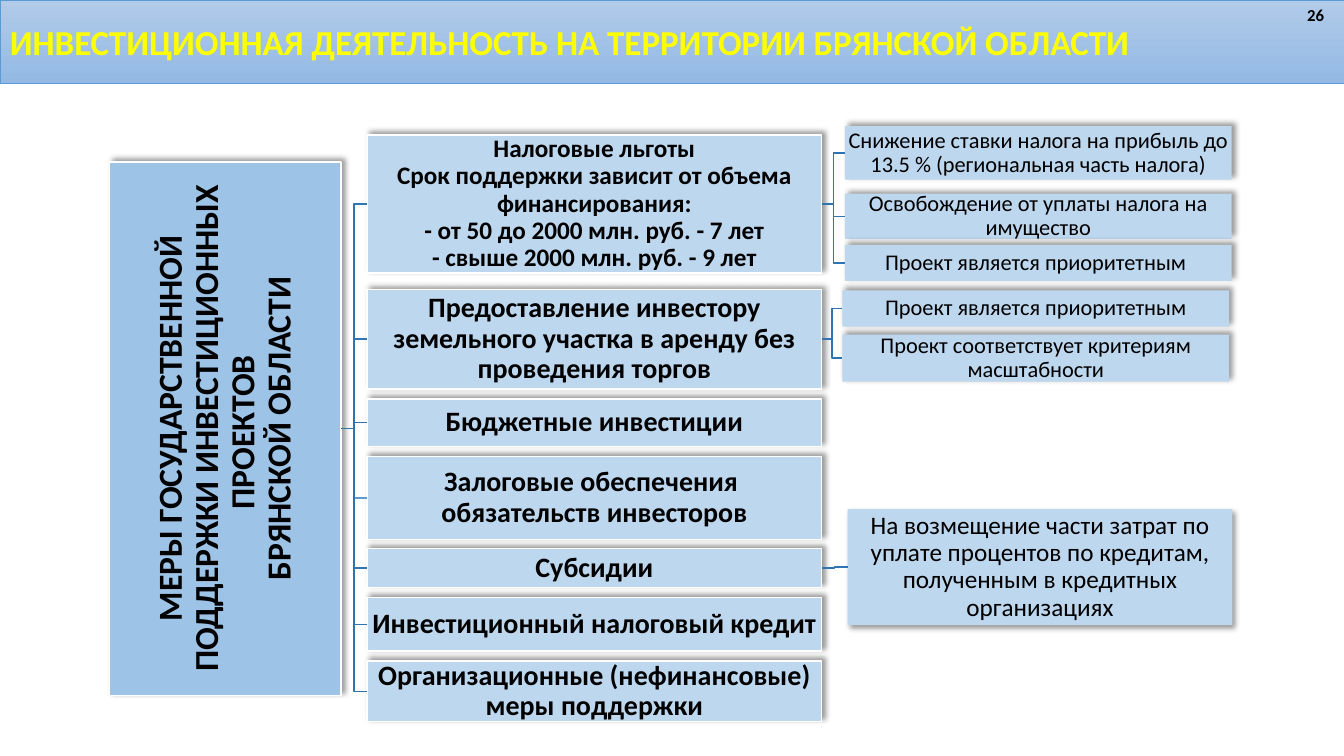
"""Draw the slide on state support measures for investment projects."""
from dataclasses import dataclass

from lxml.etree import SubElement
from pptx import Presentation
from pptx.dml.color import RGBColor
from pptx.enum.shapes import MSO_CONNECTOR, MSO_SHAPE
from pptx.enum.text import MSO_ANCHOR, PP_ALIGN
from pptx.oxml.ns import qn
from pptx.shapes.autoshape import Shape
from pptx.slide import Slide
from pptx.text.text import TextFrame
from pptx.util import Cm, Pt

FONT = "Calibri"
PALE, BLUE, SKY = "BDD7EE", "2E75B6", "5B9BD5"
MID_LEFT, MID_WIDTH = 9.25, 11.46


@dataclass
class Box:
    text: str
    left: float
    top: float
    width: float
    height: float
    size: int = 16
    bold: bool = False
    fill: str = PALE
    edge: bool = False
    angle: int = 315
    inset: float = 0.03


@dataclass
class Leaf:
    text: str
    left: float
    top: float
    height: float
    width: float = 9.75
    size: int = 16
    angle: int = 315


@dataclass
class Measure:
    text: str
    top: float
    height: float
    size: int = 20
    line: str = BLUE
    leaves: tuple[Leaf, ...] = ()


ROOT = Box(
    "МЕРЫ ГОСУДАРСТВЕННОЙ ПОДДЕРЖКИ ИНВЕСТИЦИОННЫХ ПРОЕКТОВ \vБРЯНСКОЙ ОБЛАСТИ",
    2.76, 4.08, 5.84, 13.44, 24, True, "9DC3E6", True, inset=0.05)

MEASURES = (
    Measure("Налоговые льготы\vСрок поддержки зависит от объема финансирования:"
            "\v- от 50 до 2000 млн. руб. - 7 лет\v- свыше 2000 млн. руб. - 9 лет",
            3.4, 3.48, 18, leaves=(
                Leaf("Снижение ставки налога на прибыль до 13.5 % (региональная часть налога)",
                     21.29, 3.18, 1.35),
                Leaf("Освобождение от уплаты налога на имущество", 21.29, 4.88, 1.14),
                Leaf("Проект является приоритетным ", 21.29, 6.17, 0.91))),
    Measure("Предоставление инвестору земельного участка в аренду без проведения торгов",
            7.29, 2.51, leaves=(
                Leaf("Проект является приоритетным", 21.23, 7.32, 0.91),
                Leaf("Проект соответствует критериям масштабности", 21.23, 8.43, 1.19))),
    Measure("Бюджетные инвестиции", 10.06, 1.19),
    Measure("Залоговые обеспечения \nобязательств инвесторов", 11.51, 2.08, line=SKY),
    Measure("Субсидии", 13.82, 0.99, leaves=(
        Leaf("На возмещение части затрат по уплате процентов по кредитам, "
             "полученным в кредитных организациях",
             21.36, 12.83, 2.92, 9.7, 18, 45),)),
    Measure("Инвестиционный налоговый кредит", 15.06, 1.35),
    Measure("Организационные (нефинансовые)\vмеры поддержки", 16.66, 1.52),
)


def paint(code: str) -> RGBColor:
    """Turn a hex string into a colour."""
    return RGBColor.from_string(code)


def write(frame: TextFrame, text: str, size: int, bold: bool, code: str,
          align: PP_ALIGN = PP_ALIGN.LEFT, pitch: float = 1.0) -> None:
    """Fill a text frame and style its paragraphs."""
    frame.text = text
    for para in frame.paragraphs:
        para.alignment = align
        para.line_spacing = pitch
        para.font.name = FONT
        para.font.size = Pt(size)
        para.font.bold = bold
        para.font.color.rgb = paint(code)


def shade(shape: Shape, angle: int) -> None:
    """Give a shape a soft black shadow."""
    shape.shadow.inherit = False
    glow = SubElement(shape.element.spPr.find(qn("a:effectLst")), qn("a:outerShdw"),
                      blurRad=str(Pt(4)), dist=str(Pt(3)), dir=str(angle * 60000),
                      algn="ctr", rotWithShape="0")
    tint = SubElement(glow, qn("a:srgbClr"), val="000000")
    SubElement(tint, qn("a:alpha"), val="40000")


def place(slide: Slide, box: Box) -> Shape:
    """Draw a box with centred text."""
    shape = slide.shapes.add_shape(MSO_SHAPE.RECTANGLE, Cm(box.left), Cm(box.top),
                                   Cm(box.width), Cm(box.height))
    shape.fill.solid()
    shape.fill.fore_color.rgb = paint(box.fill)
    if box.edge:
        shape.line.color.rgb = paint("FFFFFF")
        shape.line.width = Pt(1)
    else:
        shape.line.fill.background()
    shade(shape, box.angle)
    frame = shape.text_frame
    frame.word_wrap = True
    frame.vertical_anchor = MSO_ANCHOR.MIDDLE
    frame.margin_left = frame.margin_right = Cm(box.inset)
    frame.margin_top = frame.margin_bottom = Cm(box.inset)
    write(frame, box.text, box.size, box.bold, "000000", PP_ALIGN.CENTER, 0.9)
    return shape


def link(slide: Slide, start: Shape, end: Shape, code: str = BLUE) -> None:
    """Join the right side of one box to the left side of the next."""
    wire = slide.shapes.add_connector(MSO_CONNECTOR.ELBOW, 0, 0, 0, 0)
    wire.begin_connect(start, 3)
    wire.end_connect(end, 1)
    wire.line.color.rgb = paint(code)
    wire.line.width = Pt(1)
    SubElement(wire.element.spPr, qn("a:effectLst"))


def head(slide: Slide, width: int) -> None:
    """Draw the title band and the page number."""
    band = slide.shapes.add_shape(MSO_SHAPE.RECTANGLE, 0, 0, width, Cm(2.11))
    band.shadow.inherit = False
    band.fill.gradient()
    band.fill.gradient_angle = 270
    for stop, code in zip(band.fill.gradient_stops, ("B1CBE9", "93B9E4")):
        stop.color.rgb = paint(code)
    band.line.color.rgb = paint(SKY)
    band.line.width = Pt(0.5)
    band.text_frame.word_wrap = True
    band.text_frame.vertical_anchor = MSO_ANCHOR.MIDDLE
    write(band.text_frame, "ИНВЕСТИЦИОННАЯ ДЕЯТЕЛЬНОСТЬ НА ТЕРРИТОРИИ БРЯНСКОЙ ОБЛАСТИ",
          25, True, "FFFF00")
    page = slide.shapes.add_textbox(Cm(32.69), 0, Cm(0.97), Cm(0.76))
    page.text_frame.word_wrap = False
    write(page.text_frame, "26", 12, True, "000000")


def main() -> None:
    """Build and save the slide."""
    deck = Presentation()
    deck.slide_width, deck.slide_height = Cm(33.87), Cm(19.05)
    slide = deck.slides.add_slide(deck.slide_layouts[6])
    root = place(slide, ROOT)
    root.text_frame._txBody.bodyPr.set("vert", "vert270")
    for item in MEASURES:
        node = place(slide, Box(item.text, MID_LEFT, item.top, MID_WIDTH, item.height,
                                item.size, True, edge=True))
        link(slide, root, node, item.line)
        for leaf in item.leaves:
            tip = place(slide, Box(leaf.text, leaf.left, leaf.top, leaf.width, leaf.height,
                                   leaf.size, angle=leaf.angle))
            link(slide, node, tip)
    head(slide, deck.slide_width)
    deck.save("out.pptx")


if __name__ == "__main__":
    main()
